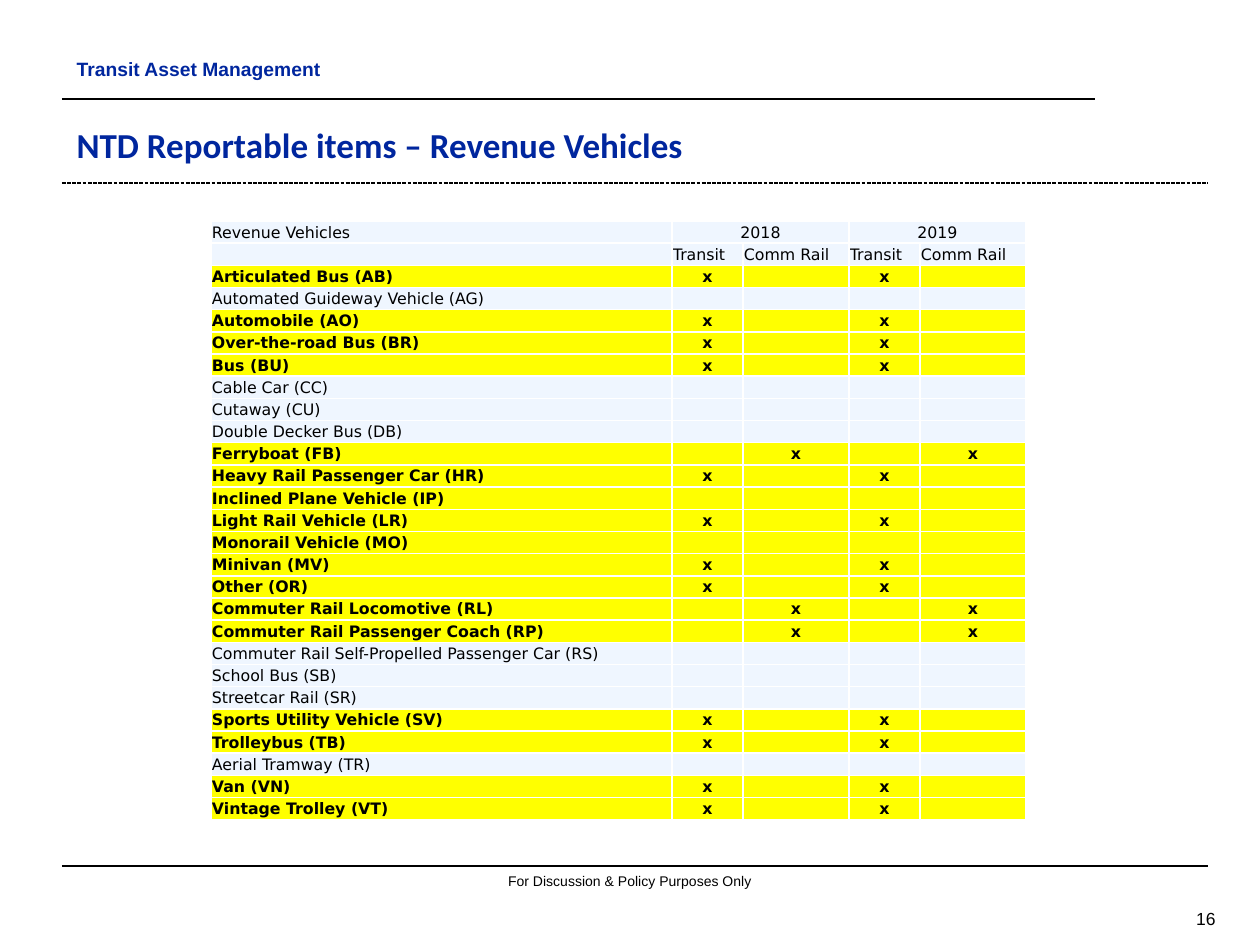
from lxml.etree import SubElement
from pptx import Presentation
from pptx.dml.color import RGBColor
from pptx.enum.dml import MSO_LINE
from pptx.enum.shapes import MSO_CONNECTOR
from pptx.enum.text import MSO_ANCHOR, MSO_AUTO_SIZE, PP_ALIGN
from pptx.oxml.ns import qn
from pptx.util import Emu, Pt

BLUE, BLACK, WHITE, PALE, YELLOW = "00269E", "000000", "FFFFFF", "EFF6FF", "FFFF00"
TRANSIT, RAIL, NO_MARK = ("x", "", "x", ""), ("", "x", "", "x"), ("", "", "", "")
COLUMNS = [461, 71, 106, 71, 106]
HEADERS = [
    ("Revenue Vehicles", "2018", "", "2019", ""),
    ("", "Transit", "Comm Rail", "Transit", "Comm Rail"),
]
VEHICLES = [
    ("Articulated Bus (AB)", TRANSIT),
    ("Automated Guideway Vehicle (AG)", None),
    ("Automobile (AO)", TRANSIT),
    ("Over-the-road Bus (BR)", TRANSIT),
    ("Bus (BU)", TRANSIT),
    ("Cable Car (CC)", None),
    ("Cutaway (CU)", None),
    ("Double Decker Bus (DB)", None),
    ("Ferryboat (FB)", RAIL),
    ("Heavy Rail Passenger Car (HR)", TRANSIT),
    ("Inclined Plane Vehicle (IP)", NO_MARK),
    ("Light Rail Vehicle (LR)", TRANSIT),
    ("Monorail Vehicle (MO)", NO_MARK),
    ("Minivan (MV)", TRANSIT),
    ("Other (OR)", TRANSIT),
    ("Commuter Rail Locomotive (RL)", RAIL),
    ("Commuter Rail Passenger Coach (RP)", RAIL),
    ("Commuter Rail Self-Propelled Passenger Car (RS)", None),
    ("School Bus (SB)", None),
    ("Streetcar Rail (SR)", None),
    ("Sports Utility Vehicle (SV)", TRANSIT),
    ("Trolleybus (TB)", TRANSIT),
    ("Aerial Tramway (TR)", None),
    ("Van (VN)", TRANSIT),
    ("Vintage Trolley (VT)", TRANSIT),
]


def px(n):
    """Convert pixels at 126 to the inch into EMU."""
    return Emu(round(n * 914400 / 126))


def color(value):
    """Return the colour for a hex string."""
    return RGBColor.from_string(value)


def format_text(tf, text, size, font, fill=BLACK, bold=False, align=PP_ALIGN.LEFT):
    """Set one paragraph of text and its formatting."""
    tf.text = text
    p = tf.paragraphs[0]
    p.alignment = align
    p.space_before = Pt(0)
    for r in p.runs:
        r.font.size, r.font.name, r.font.bold = Pt(size), font, bold
        r.font.color.rgb = color(fill)
    return p


def place(sp, x, y, w, h, anchor):
    """Move a text shape to its box and fix its text behaviour."""
    sp.left, sp.top, sp.width, sp.height = px(x), px(y), px(w), px(h)
    tf = sp.text_frame
    tf.word_wrap, tf.auto_size, tf.vertical_anchor = True, MSO_AUTO_SIZE.NONE, anchor
    return tf


def add_rule(slide, x, y, w, weight, dash=None):
    """Draw a horizontal rule."""
    ln = slide.shapes.add_connector(MSO_CONNECTOR.STRAIGHT, px(x), px(y), px(x + w), px(y))
    ln.line.color.rgb = color(BLACK)
    ln.line.width = Pt(weight)
    if dash:
        ln.line.dash_style = dash
    SubElement(ln._element.spPr, qn("a:effectLst"))


def add_heading(slide, x, y, w):
    """Fill the section label and title with the rules below them."""
    title, body = slide.placeholders[0], slide.placeholders[1]
    tf = place(body, x + 2, y, 1007, 32, MSO_ANCHOR.MIDDLE)
    p = format_text(tf, "Transit Asset Management", 11, "Arial", BLUE, True)
    pPr = p._p.get_or_add_pPr()
    pPr.set("marL", "0")
    pPr.set("indent", "0")
    SubElement(pPr, qn("a:buNone"))
    add_rule(slide, x, y + 46, 1033, 1)
    tf = place(title, x + 2, y + 64, 934, 55, MSO_ANCHOR.TOP)
    format_text(tf, "NTD Reportable items – Revenue Vehicles", 20, "Calibri", BLUE, True)
    add_rule(slide, x, y + 130, w, 0.75, MSO_LINE.SQUARE_DOT)


def add_footer(slide, x, y, w):
    """Add the bottom rule, the notice and the page number."""
    add_rule(slide, x, y, w, 0.75)
    notice = slide.shapes.add_textbox(0, 0, 0, 0)
    tf = place(notice, x + 388, y, 360, 30, MSO_ANCHOR.TOP)
    format_text(tf, "For Discussion & Policy Purposes Only", 8, "Arial", align=PP_ALIGN.CENTER)
    number = slide.shapes.add_textbox(0, 0, 0, 0)
    tf = place(number, x + 1061, y + 37, 105, 31, MSO_ANCHOR.MIDDLE)
    format_text(tf, "16", 10, "Arial", align=PP_ALIGN.RIGHT)


def format_cell(cell, text, fill, bold, align):
    """Style one table cell with white borders."""
    cell.margin_left = cell.margin_right = cell.margin_top = px(1)
    cell.margin_bottom = 0
    cell.vertical_anchor = MSO_ANCHOR.MIDDLE
    p = format_text(cell.text_frame, text, 9, "DejaVu Sans", BLACK, bold, align)
    if not text:
        p._p.get_or_add_endParaRPr().set("sz", "900")
    tcPr = cell._tc.get_or_add_tcPr()
    for side in ("lnL", "lnR", "lnT", "lnB"):
        ln = SubElement(tcPr, qn("a:" + side), w=str(Pt(1)))
        SubElement(SubElement(ln, qn("a:solidFill")), qn("a:srgbClr"), val=WHITE)
    cell.fill.solid()
    cell.fill.fore_color.rgb = color(fill)


def add_vehicle_table(slide, x, y, h):
    """Add the table of vehicle types and the years they are reported."""
    rows = [(row, PALE, False) for row in HEADERS]
    for name, marks in VEHICLES:
        rows.append(((name, *(marks or NO_MARK)), YELLOW if marks else PALE, bool(marks)))
    frame = slide.shapes.add_table(len(rows), len(COLUMNS), px(x), px(y), px(sum(COLUMNS)), px(h))
    table = frame.table
    table.first_row = table.horz_banding = False
    for col, width in zip(table.columns, COLUMNS):
        col.width = px(width)
    for i, (texts, fill, bold) in enumerate(rows):
        table.rows[i].height = px(h / len(rows))
        for j, text in enumerate(texts):
            centred = j > 0 and i != 1
            align = PP_ALIGN.CENTER if centred else PP_ALIGN.LEFT
            format_cell(table.cell(i, j), text, fill, bold, align)
    for j in (1, 3):
        table.cell(0, j).merge(table.cell(0, j + 1))


def main():
    """Build and save the slide."""
    prs = Presentation()
    prs.slide_width, prs.slide_height = px(1260), px(945)
    slide = prs.slides.add_slide(prs.slide_layouts[1])
    add_heading(slide, 62, 53, 1146)
    add_vehicle_table(slide, 211, 221, 600)
    add_footer(slide, 62, 866, 1146)
    prs.save("out.pptx")


if __name__ == "__main__":
    main()
